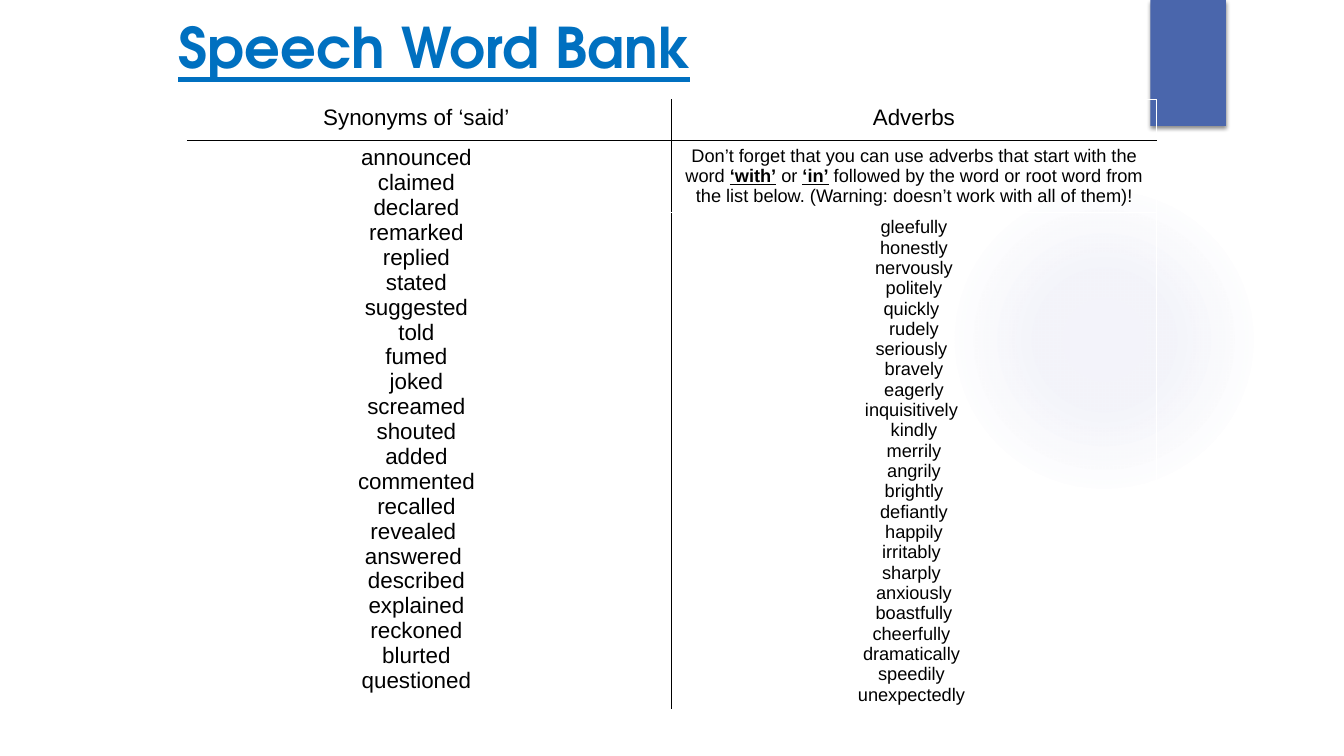
from dataclasses import dataclass

from lxml import etree
from pptx import Presentation
from pptx.dml.color import RGBColor
from pptx.enum.shapes import MSO_SHAPE
from pptx.enum.text import MSO_ANCHOR, PP_ALIGN
from pptx.oxml.ns import nsdecls
from pptx.util import Inches, Pt

RECTANGLE, OVAL = MSO_SHAPE.RECTANGLE, MSO_SHAPE.OVAL
LEFT, CENTER = PP_ALIGN.LEFT, PP_ALIGN.CENTER
MIDDLE = MSO_ANCHOR.MIDDLE


@dataclass(frozen=True)
class Theme:
    title_font: str = "TeX Gyre Adventor"
    body_font: str = "Arial"
    title_color: str = "0070C0"
    ribbon: str = "4A66AC"
    glow: str = "5C64B7"
    ink: str = "000000"
    paper: str = "FFFFFF"
    title_size: int = 40
    large: int = 16
    small: int = 13


theme = Theme()

SYNONYMS = """announced claimed declared remarked replied stated suggested told fumed
joked screamed shouted added commented recalled revealed answered described explained
reckoned blurted questioned""".split()
ADVERBS = """gleefully honestly nervously politely quickly rudely seriously bravely eagerly
inquisitively kindly merrily angrily brightly defiantly happily irritably sharply anxiously
boastfully cheerfully dramatically speedily unexpectedly""".split()
TRAILING_SPACE = {"revealed", "answered", "quickly", "seriously", "inquisitively", "irritably",
                  "sharply", "cheerfully", "dramatically", "speedily", "unexpectedly"}
HINT = [
    ("Don’t forget that you can use adverbs that start with the word ", False),
    ("‘with’", True),
    (" or ", False),
    ("‘in’", True),
    (" followed by the word or root word from the list below. "
     "(Warning: doesn’t work with all of them)!", False),
]


def drawing_xml(markup):
    tag, rest = markup.split(" ", 1)
    return etree.fromstring(f"{tag} {nsdecls('a')} {rest}")


def fill_cell(cell, lines, size):
    for number, line in enumerate(lines):
        paragraph = cell.text_frame.paragraphs[0] if number == 0 else cell.text_frame.add_paragraph()
        paragraph.alignment = CENTER
        for text, stressed in line:
            run = paragraph.add_run()
            run.text = text
            run.font.bold = stressed
            run.font.underline = stressed
            run.font.size = Pt(size)
            run.font.name = theme.body_font
            run.font.color.rgb = RGBColor.from_string(theme.ink)


prs = Presentation()
prs.slide_width, prs.slide_height = Inches(13.33), Inches(7.5)
slide = prs.slides.add_slide(prs.slide_layouts[5])

glow = slide.shapes.add_shape(OVAL, Inches(9.41), Inches(1.83), Inches(3.08), Inches(3.08))
glow.shadow.inherit = False
glow.line.fill.background()
stops = "".join(
    f'<a:gs pos="{place * 1000}"><a:srgbClr val="{theme.glow}">'
    f'<a:alpha val="{opacity * 1000}"/></a:srgbClr></a:gs>'
    for place, opacity in ((0, 7), (36, 6), (69, 0), (100, 0)))
glow_properties = glow.fill._xPr
glow_properties.insert(2, drawing_xml(
    f'<a:gradFill rotWithShape="1"><a:gsLst>{stops}</a:gsLst><a:path path="circle">'
    '<a:fillToRect l="50000" t="50000" r="50000" b="50000"/></a:path></a:gradFill>'))

ribbon = slide.shapes.add_shape(RECTANGLE, Inches(11.41), 0, Inches(0.75), Inches(1.25))
ribbon.shadow.inherit = False
ribbon.fill.solid()
ribbon.fill.fore_color.rgb = RGBColor.from_string(theme.ribbon)
ribbon.line.fill.background()
ribbon_effects = ribbon.fill._xPr.find("{*}effectLst")
ribbon_effects.append(drawing_xml(
    f'<a:outerShdw blurRad="{Pt(3)}" dist="{Pt(2)}" dir="5400000" rotWithShape="0">'
    f'<a:srgbClr val="{theme.ink}"><a:alpha val="45000"/></a:srgbClr></a:outerShdw>'))

title = slide.shapes.title
title.left, title.top, title.width, title.height = Inches(1.67), 0, Inches(10), Inches(0.92)
title.text_frame.text = "Speech Word Bank"
title.text_frame.vertical_anchor = MIDDLE
heading = title.text_frame.paragraphs[0]
heading.alignment = LEFT
heading.font.name = theme.title_font
heading.font.size = Pt(theme.title_size)
heading.font.bold = True
heading.font.underline = True
heading.font.color.rgb = RGBColor.from_string(theme.title_color)

column_widths = (4.54, 0.26, 4.81)
row_heights = (0.37, 0.71, 4.93)
word_bank = slide.shapes.add_table(
    len(row_heights), len(column_widths), Inches(1.86), Inches(0.99),
    Inches(sum(column_widths)), Inches(sum(row_heights))).table
word_bank.first_row = False
word_bank.horz_banding = False
for column, width in zip(word_bank.columns, column_widths):
    column.width = Inches(width)
for row, height in zip(word_bank.rows, row_heights):
    row.height = Inches(height)

for row in range(len(row_heights)):
    for column in range(len(column_widths)):
        cell = word_bank.cell(row, column)
        cell.fill.background()
        black_edges = {"L": column == 2, "R": column == 1, "T": row == 1, "B": row == 0}
        for order, (side, black) in enumerate(black_edges.items()):
            color = theme.ink if black else theme.paper
            cell._tc.tcPr.insert(order, drawing_xml(
                f'<a:ln{side} w="{Pt(1)}"><a:solidFill><a:srgbClr val="{color}"/>'
                f'</a:solidFill></a:ln{side}>'))

for column in (0, 1):
    word_bank.cell(1, column).merge(word_bank.cell(2, column))

synonym_lines, adverb_lines = (
    [[(word + " " * (word in TRAILING_SPACE), False)] for word in words]
    for words in (SYNONYMS, ADVERBS))
fill_cell(word_bank.cell(0, 0), [[("Synonyms of ‘said’", False)]], theme.large)
fill_cell(word_bank.cell(0, 2), [[("Adverbs", False)]], theme.large)
fill_cell(word_bank.cell(1, 0), synonym_lines, theme.large)
fill_cell(word_bank.cell(1, 2), [HINT], theme.small)
fill_cell(word_bank.cell(2, 2), adverb_lines, theme.small)

prs.save("out.pptx")
